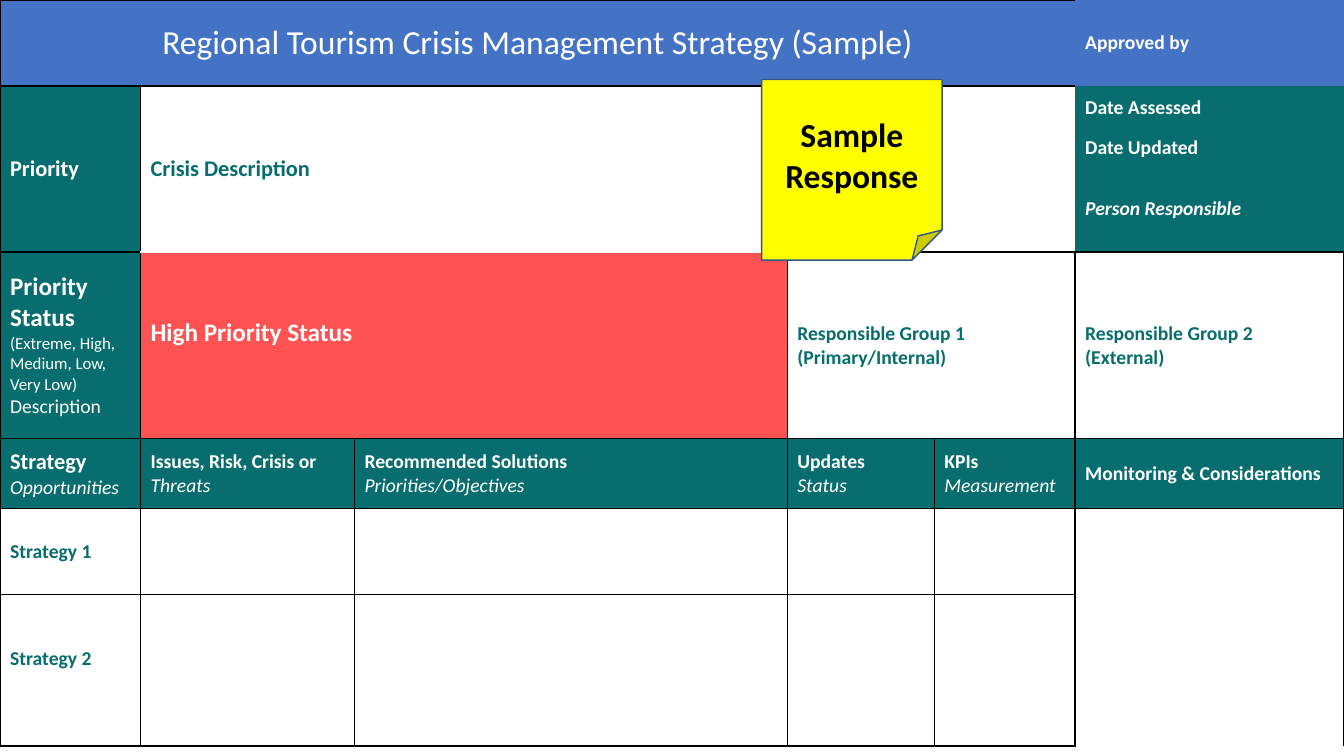
import pptx
import pptx.util
import pptx.dml.color
import pptx.enum.shapes
import pptx.enum.text
import pptx.oxml
import pptx.oxml.ns

Pt = pptx.util.Pt
TEAL, BLUE, RED, WHITE, BLACK = "086D6E", "4472C4", "FF5353", "FFFFFF", "000000"
ALL_BLACK = dict.fromkeys("LRTB", BLACK)
CENTER = pptx.enum.text.PP_ALIGN.CENTER
MIDDLE = pptx.enum.text.MSO_ANCHOR.MIDDLE


def rgb(value):
    return pptx.dml.color.RGBColor.from_string(value)


class StrategySlide:
    font = "Calibri"

    def __init__(self, prs):
        self.s = prs.slides.add_slide(prs.slide_layouts[6])

    def text(self, tf, paragraphs, align=None):
        for i, runs in enumerate(paragraphs):
            p = tf.paragraphs[0] if i == 0 else tf.add_paragraph()
            p.alignment = align
            for words, size, style, color in runs:
                r = p.add_run()
                r.text = words
                r.font.name = self.font
                r.font.size = Pt(size)
                r.font.bold = "b" in style
                r.font.italic = "i" in style
                r.font.color.rgb = rgb(color)

    def table(self, widths, heights):
        frame = self.s.shapes.add_table(len(heights), len(widths), 0, 0,
                                        Pt(sum(widths)), Pt(sum(heights)))
        self.tbl = frame.table
        self.tbl.first_row = self.tbl.horz_banding = False
        for column, width in zip(self.tbl.columns, widths):
            column.width = Pt(width)
        for row, height in zip(self.tbl.rows, heights):
            row.height = Pt(height)

    def borders(self, cell, colors):
        tcPr = cell._tc.get_or_add_tcPr()
        for i, side in enumerate("LRTB"):
            if side in colors:
                fill = f'<a:solidFill><a:srgbClr val="{colors[side]}"/></a:solidFill>'
            else:
                fill = "<a:noFill/>"
            ns = pptx.oxml.ns.nsdecls("a")
            tcPr.insert(i, pptx.oxml.parse_xml(
                f'<a:ln{side} {ns} w="{Pt(1)}">{fill}</a:ln{side}>'))

    def cell(self, row, col, paragraphs=(), fill=TEAL, span=(1, 1),
             edges=ALL_BLACK, align=None, bottom=3.6):
        origin = self.tbl.cell(row, col)
        rows, cols = span
        if span != (1, 1):
            origin.merge(self.tbl.cell(row + rows - 1, col + cols - 1))
        for i in range(rows):
            for j in range(cols):
                part = self.tbl.cell(row + i, col + j)
                part.fill.solid()
                part.fill.fore_color.rgb = rgb(fill)
                outer = {"L": j == 0, "R": j == cols - 1,
                         "T": i == 0, "B": i == rows - 1}
                self.borders(part, {k: c for k, c in edges.items() if outer[k]})
        origin.vertical_anchor = MIDDLE
        origin.margin_bottom = Pt(bottom)
        self.text(origin.text_frame, paragraphs, align)

    def note(self, left, top, side, paragraphs):
        sp = self.s.shapes.add_shape(pptx.enum.shapes.MSO_SHAPE.FOLDED_CORNER,
                                     Pt(left), Pt(top), Pt(side), Pt(side))
        sp.shadow.inherit = False
        sp.fill.solid()
        sp.fill.fore_color.rgb = rgb("FFFF00")
        sp.line.color.rgb = rgb("325491")
        sp.line.width = Pt(1)
        tf = sp.text_frame
        tf.word_wrap = True
        tf.vertical_anchor = MIDDLE
        self.text(tf, paragraphs, CENTER)


def main():
    prs = pptx.Presentation()
    prs.slide_width, prs.slide_height = Pt(960), Pt(540)
    slide = StrategySlide(prs)
    slide.table([100.4, 152.8, 309.2, 105, 100.6, 192],
                [61.5, 31, 26, 61.5, 133.5, 50, 61.5, 108])

    slide.cell(0, 0, [[("Regional Tourism Crisis Management Strategy (Sample)", 24, "", WHITE)]],
               BLUE, (1, 5), {"L": BLACK, "T": BLACK, "B": BLACK}, CENTER)
    slide.cell(0, 5, [[("Approved by", 14, "b", WHITE)]], BLUE, edges={})

    slide.cell(1, 0, [[("Priority", 16, "b", WHITE)]], span=(3, 1))
    slide.cell(1, 1, [[("Crisis Description", 16, "b", TEAL)]], WHITE, (3, 4),
               {"L": BLACK, "T": BLACK, "B": WHITE})
    sign_off = [("Date Assessed", "b", {}), ("Date Updated", "b", {}),
                ("Person Responsible", "bi", {"B": BLACK})]
    for row, (label, style, edges) in enumerate(sign_off, 1):
        slide.cell(row, 5, [[(label, 14, style, WHITE)]], edges=edges)

    slide.cell(4, 0, [[("Priority Status ", 18, "b", WHITE),
                       ("(Extreme, High, Medium, Low, Very Low)", 12, "", WHITE)],
                      [("Description", 14, "", WHITE)]])
    slide.cell(4, 1, [[("High Priority Status", 18, "b", WHITE)]], RED, (1, 2),
               {**ALL_BLACK, "T": WHITE}, bottom=21)
    slide.cell(4, 3, [[("Responsible Group 1 (Primary/Internal)", 14, "b", TEAL)]],
               WHITE, (1, 2))
    slide.cell(4, 5, [[("Responsible Group 2 (External)", 14, "b", TEAL)]], WHITE)

    slide.cell(5, 0, [[("Strategy", 16, "b", WHITE)], [("Opportunities", 14, "i", WHITE)]])
    slide.cell(5, 1, [[("Issues, Risk, Crisis or ", 14, "b", WHITE),
                       ("Threats", 14, "i", WHITE)]])
    headings = [("Recommended Solutions", "Priorities/Objectives"),
                ("Updates", "Status"), ("KPIs", "Measurement")]
    for col, (heading, detail) in enumerate(headings, 2):
        slide.cell(5, col, [[(heading, 14, "b", WHITE)], [(detail, 14, "i", WHITE)]])
    slide.cell(5, 5, [[("Monitoring & Considerations", 14, "b", WHITE)]])

    for row, label, bottom in [(6, "Strategy 1", 3.6), (7, "Strategy 2", 21)]:
        slide.cell(row, 0, [[(label, 14, "b", TEAL)]], WHITE, bottom=bottom)
        for col in range(1, 5):
            slide.cell(row, col, fill=WHITE)
    slide.cell(6, 5, fill=WHITE, span=(2, 1))

    slide.note(544, 56.75, 129, [[("Sample Response", 24, "b", BLACK)]])
    prs.save("out.pptx")


if __name__ == "__main__":
    main()
